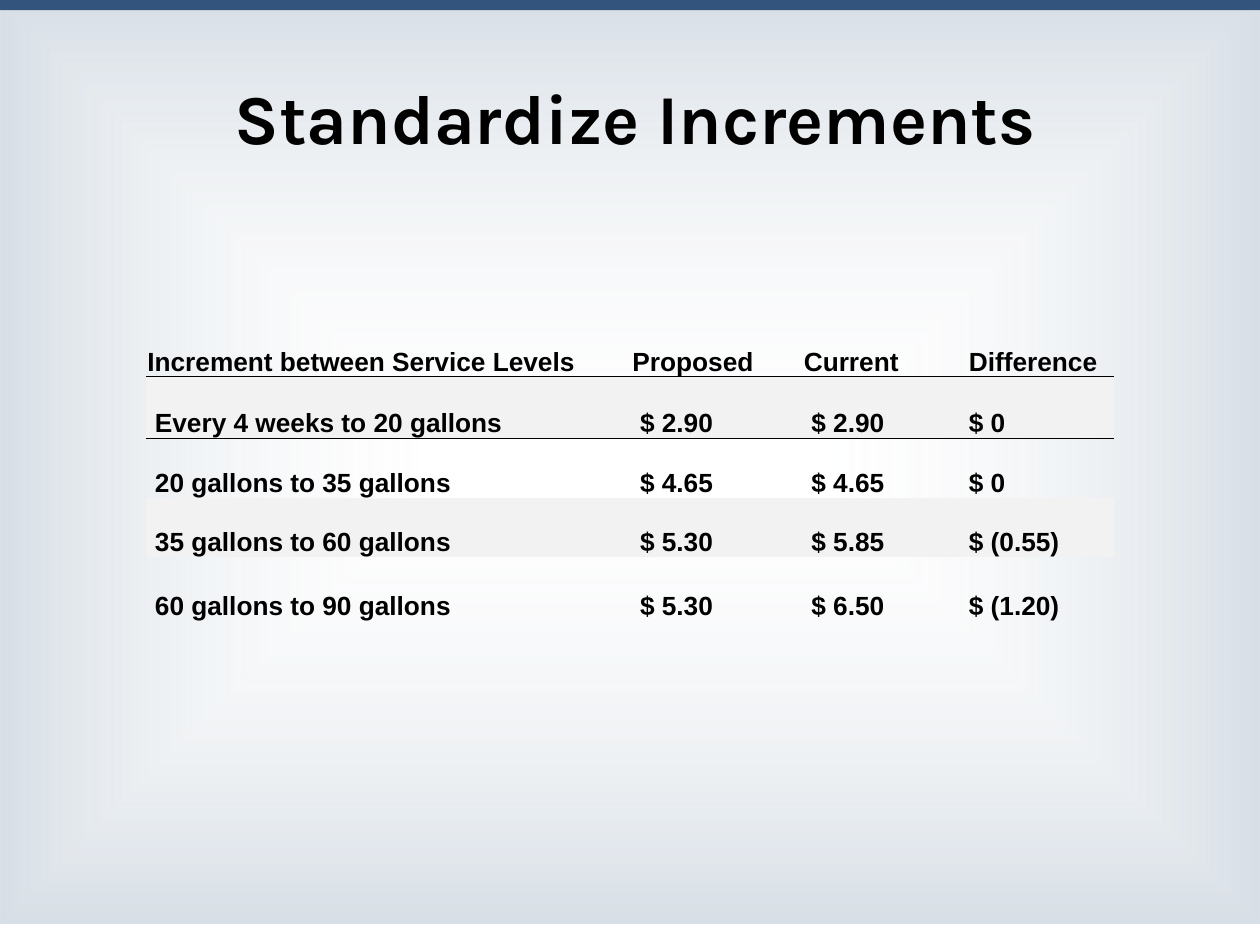
"""Build the Standardize Increments slide with its table of service level prices."""
from pptx import Presentation
from pptx.dml.color import RGBColor
from pptx.enum.shapes import MSO_SHAPE as Preset
from pptx.enum.text import MSO_ANCHOR as Anchor, PP_ALIGN as Align
from pptx.oxml import parse_xml
from pptx.oxml.ns import nsdecls, qn
from pptx.util import Inches, Pt

TITLE = "Standardize Increments"
ROWS = [
    ("Increment between Service Levels", "Proposed", "Current", "Difference"),
    ("Every 4 weeks to 20 gallons", "$ 2.90", "$ 2.90", "$ 0"),
    ("20 gallons to 35 gallons", "$ 4.65", "$ 4.65", "$ 0"),
    ("35 gallons to 60 gallons", "$ 5.30", "$ 5.85", "$ (0.55)"),
    ("60 gallons to 90 gallons", "$ 5.30", "$ 6.50", "$ (1.20)"),
]
COLUMN_WIDTHS = [3.85, 1.36, 1.31, 1.16]
ROW_HEIGHTS = [0.76, 0.49, 0.47, 0.47, 0.51]
TABLE_LEFT, TABLE_TOP = 1.16, 2.23
WIDTH, HEIGHT = 10, 7.5

BLACK = RGBColor(0x00, 0x00, 0x00)
NAVY = RGBColor(0x33, 0x55, 0x7D)
BAND = RGBColor(0xF2, 0xF2, 0xF2)
MIST = RGBColor(0xCC, 0xD5, 0xDE)
WHITE = RGBColor(0xFF, 0xFF, 0xFF)
NO_STYLE = "{2D5ABB26-0587-4C30-8999-92F81FD0307C}"
GLOW_STOPS = [(0, WHITE, 4), (100, MIST, 77)]


def add_panel(slide, height):
    shape = slide.shapes.add_shape(Preset.RECTANGLE, 0, 0, Inches(WIDTH), Inches(height))
    shape.shadow.inherit = False
    shape.line.fill.background()
    return shape


def fill_with_glow(shape):
    stops = "".join(
        f'<a:gs pos="{position * 1000}"><a:srgbClr val="{color}">'
        f'<a:alpha val="{opacity * 1000}"/></a:srgbClr></a:gs>'
        for position, color, opacity in GLOW_STOPS
    )
    gradient = parse_xml(
        f'<a:gradFill {nsdecls("a")} rotWithShape="1"><a:gsLst>{stops}</a:gsLst>'
        '<a:path path="shape"><a:fillToRect l="50000" t="50000" r="50000" b="50000"/>'
        "</a:path></a:gradFill>"
    )
    shape._element.spPr.find(qn("a:prstGeom")).addnext(gradient)


def write(paragraph, text, font_name, size):
    run = paragraph.add_run()
    run.text = text
    font = run.font
    font.name, font.size, font.bold = font_name, Pt(size), True
    font.color.rgb = BLACK


def add_title(slide):
    box = slide.shapes.add_textbox(Inches(0.33), Inches(0.3), Inches(9.42), Inches(1.25))
    frame = box.text_frame
    frame.word_wrap = True
    frame.vertical_anchor = Anchor.MIDDLE
    paragraph = frame.paragraphs[0]
    paragraph.alignment = Align.CENTER
    write(paragraph, TITLE, "Karla", 40)


def add_rule(cell, side):
    rule = parse_xml(
        f'<a:{side} {nsdecls("a")} w="{Pt(1)}"><a:solidFill>'
        f'<a:srgbClr val="{BLACK}"/></a:solidFill></a:{side}>'
    )
    cell._tc.get_or_add_tcPr().insert(0, rule)


def fill_cell(cell, text, row, column):
    indented = row > 0 and column < len(COLUMN_WIDTHS) - 1
    cell.margin_left = cell.margin_right = Inches(0.07 if indented else 0.01)
    cell.margin_top = Inches(0 if indented else 0.01)
    cell.margin_bottom = 0
    cell.vertical_anchor = Anchor.BOTTOM
    if row % 2:
        cell.fill.solid()
        cell.fill.fore_color.rgb = BAND
    else:
        cell.fill.background()
    if row < 2:
        add_rule(cell, "lnT" if row else "lnB")
    paragraph = cell.text_frame.paragraphs[0]
    if indented:
        paragraph.line_spacing = 1.07
    write(paragraph, text, "Arial", 15)


def add_price_table(slide):
    frame = slide.shapes.add_table(
        len(ROWS), len(COLUMN_WIDTHS), Inches(TABLE_LEFT), Inches(TABLE_TOP),
        Inches(sum(COLUMN_WIDTHS)), Inches(sum(ROW_HEIGHTS)),
    )
    table = frame.table
    table.horz_banding = False
    table._tbl.tblPr.find(qn("a:tableStyleId")).text = NO_STYLE
    for column, width in zip(table.columns, COLUMN_WIDTHS):
        column.width = Inches(width)
    for row, height in zip(table.rows, ROW_HEIGHTS):
        row.height = Inches(height)
    for row, texts in enumerate(ROWS):
        for column, text in enumerate(texts):
            fill_cell(table.cell(row, column), text, row, column)


def main():
    presentation = Presentation()
    presentation.slide_width, presentation.slide_height = Inches(WIDTH), Inches(HEIGHT)
    slide = presentation.slides.add_slide(presentation.slide_layouts[6])
    fill_with_glow(add_panel(slide, 7.33))
    top_bar = add_panel(slide, 0.08)
    top_bar.fill.solid()
    top_bar.fill.fore_color.rgb = NAVY
    add_title(slide)
    add_price_table(slide)
    presentation.save("out.pptx")


if __name__ == "__main__":
    main()
